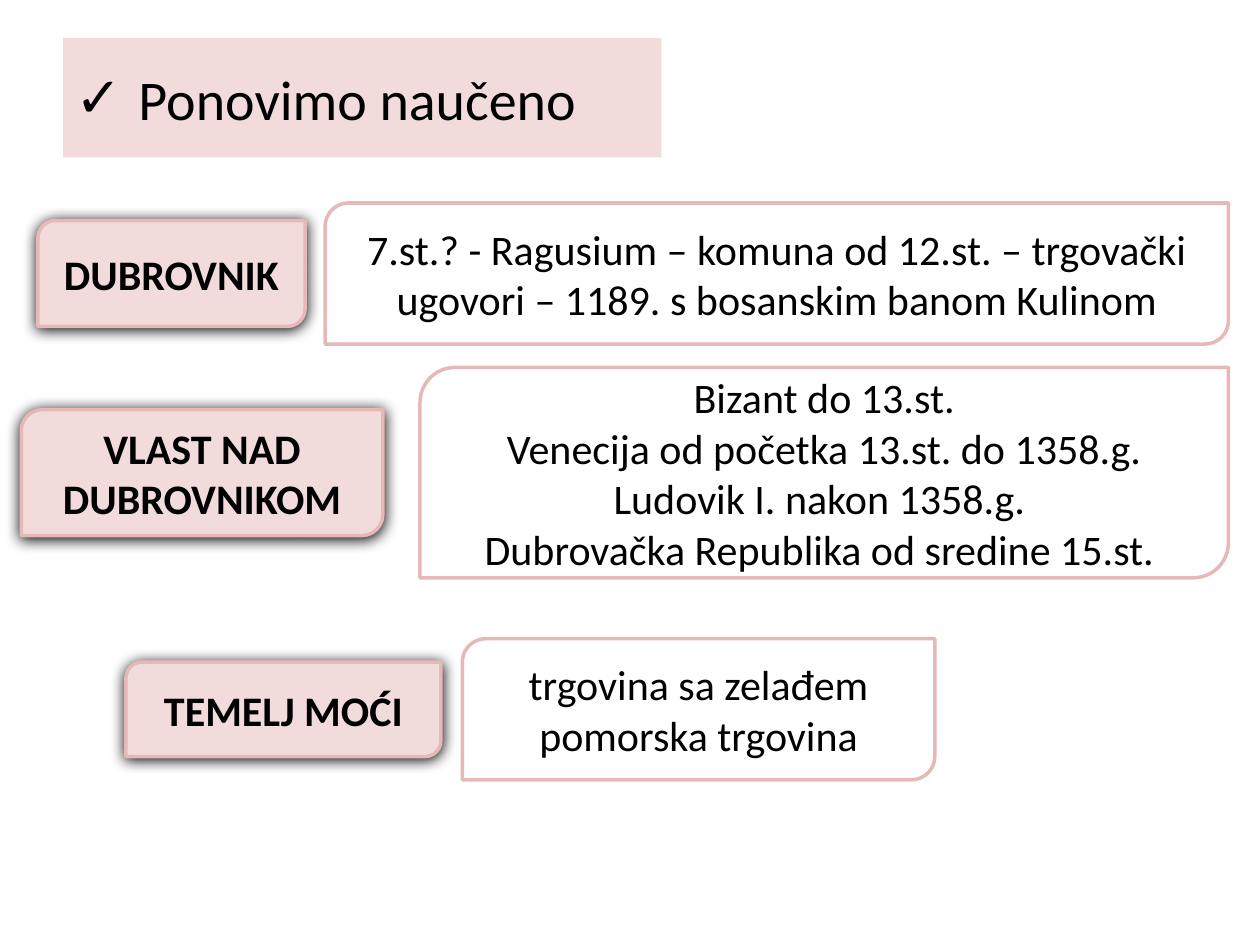
from dataclasses import dataclass

from lxml import etree
from pptx import Presentation
from pptx.dml.color import RGBColor
from pptx.enum.shapes import MSO_SHAPE
from pptx.enum.text import MSO_ANCHOR, PP_ALIGN
from pptx.oxml.ns import qn
from pptx.util import Pt

RECTANGLE = MSO_SHAPE.RECTANGLE
ROUND_DIAGONAL = MSO_SHAPE.ROUND_2_DIAG_RECTANGLE
MIDDLE = MSO_ANCHOR.MIDDLE
LEFT, CENTER = PP_ALIGN.LEFT, PP_ALIGN.CENTER


@dataclass(frozen=True)
class Theme:
    font: str = "Calibri"
    title_size: int = 32
    body_size: int = 24
    border_width: int = 2
    text: RGBColor = RGBColor(0, 0, 0)
    blush: RGBColor = RGBColor(0xF2, 0xDC, 0xDB)
    border: RGBColor = RGBColor(0xE6, 0xB9, 0xB8)
    white: RGBColor = RGBColor(0xFF, 0xFF, 0xFF)


THEME = Theme()


def add_panel(slide, box, outline, fill):
    panel = slide.shapes.add_shape(outline, *(Pt(length) for length in box))
    panel.shadow.inherit = False
    panel.fill.solid()
    panel.fill.fore_color.rgb = fill
    panel.text_frame.word_wrap = True
    panel.text_frame.vertical_anchor = MIDDLE
    return panel


def style_paragraph(paragraph, size, alignment, bold=False):
    paragraph.alignment = alignment
    paragraph.font.name = THEME.font
    paragraph.font.size = Pt(size)
    paragraph.font.bold = bold
    paragraph.font.color.rgb = THEME.text


def add_check_bullet(paragraph, indent):
    properties = paragraph._p.get_or_add_pPr()
    properties.set("marL", str(Pt(indent)))
    properties.set("indent", str(-Pt(indent)))
    etree.SubElement(properties, qn("a:buFont"), typeface="Arial")
    etree.SubElement(properties, qn("a:buChar"), char="✓")


def add_drop_shadow(panel):
    effects = panel._element.spPr.find(qn("a:effectLst"))
    shadow = etree.SubElement(
        effects, qn("a:outerShdw"), blurRad=str(Pt(8.5)), dist=str(Pt(1)),
        dir="5400000", algn="ctr", rotWithShape="0")
    color = etree.SubElement(shadow, qn("a:srgbClr"), val=str(THEME.text))
    etree.SubElement(color, qn("a:alpha"), val="100000")


def add_title(slide, box, wording):
    title = add_panel(slide, box, RECTANGLE, THEME.blush)
    title.line.fill.background()
    paragraph = title.text_frame.paragraphs[0]
    paragraph.text = wording
    add_check_bullet(paragraph, 36)
    style_paragraph(paragraph, THEME.title_size, LEFT)


def add_card(slide, box, lines, fill, bold=False):
    card = add_panel(slide, box, ROUND_DIAGONAL, fill)
    card.line.color.rgb = THEME.border
    card.line.width = Pt(THEME.border_width)
    card.text_frame.text = "\n".join(lines)
    for paragraph in card.text_frame.paragraphs:
        style_paragraph(paragraph, THEME.body_size, CENTER, bold)
    return card


def add_topic(slide, box, topic, topic_width, topic_height, gap, facts):
    left, top, width, height = box
    topic_top = top + (height - topic_height) / 2
    topic_box = (left, topic_top, topic_width, topic_height)
    add_drop_shadow(add_card(slide, topic_box, [topic], THEME.blush, bold=True))
    facts_left = left + topic_width + gap
    facts_box = (facts_left, top, left + width - facts_left, height)
    add_card(slide, facts_box, facts, THEME.white)


def main():
    presentation = Presentation()
    presentation.slide_width, presentation.slide_height = Pt(720), Pt(540)
    slide = presentation.slides.add_slide(presentation.slide_layouts[6])

    add_title(slide, (36, 21.6, 342, 68.4), "Ponovimo naučeno")
    add_topic(slide, (21.6, 116, 680.4, 80.6), "DUBROVNIK", 152.8, 60.5, 11.4, [
        "7.st.? - Ragusium – komuna od 12.st. – trgovački ugovori – "
        "1189. s bosanskim banom Kulinom",
    ])
    add_topic(slide, (12.2, 210, 689.8, 120.2), "VLAST NAD DUBROVNIKOM", 206.6, 72, 21.2, [
        "Bizant do 13.st.",
        "Venecija od početka 13.st. do 1358.g.",
        "Ludovik I. nakon 1358.g. ",
        "Dubrovačka Republika od sredine 15.st. ",
    ])
    add_topic(slide, (72, 365, 462.2, 80.6), "TEMELJ MOĆI", 180, 54, 12.2, [
        "trgovina sa zelađem",
        "pomorska trgovina",
    ])

    presentation.save("out.pptx")


if __name__ == "__main__":
    main()
